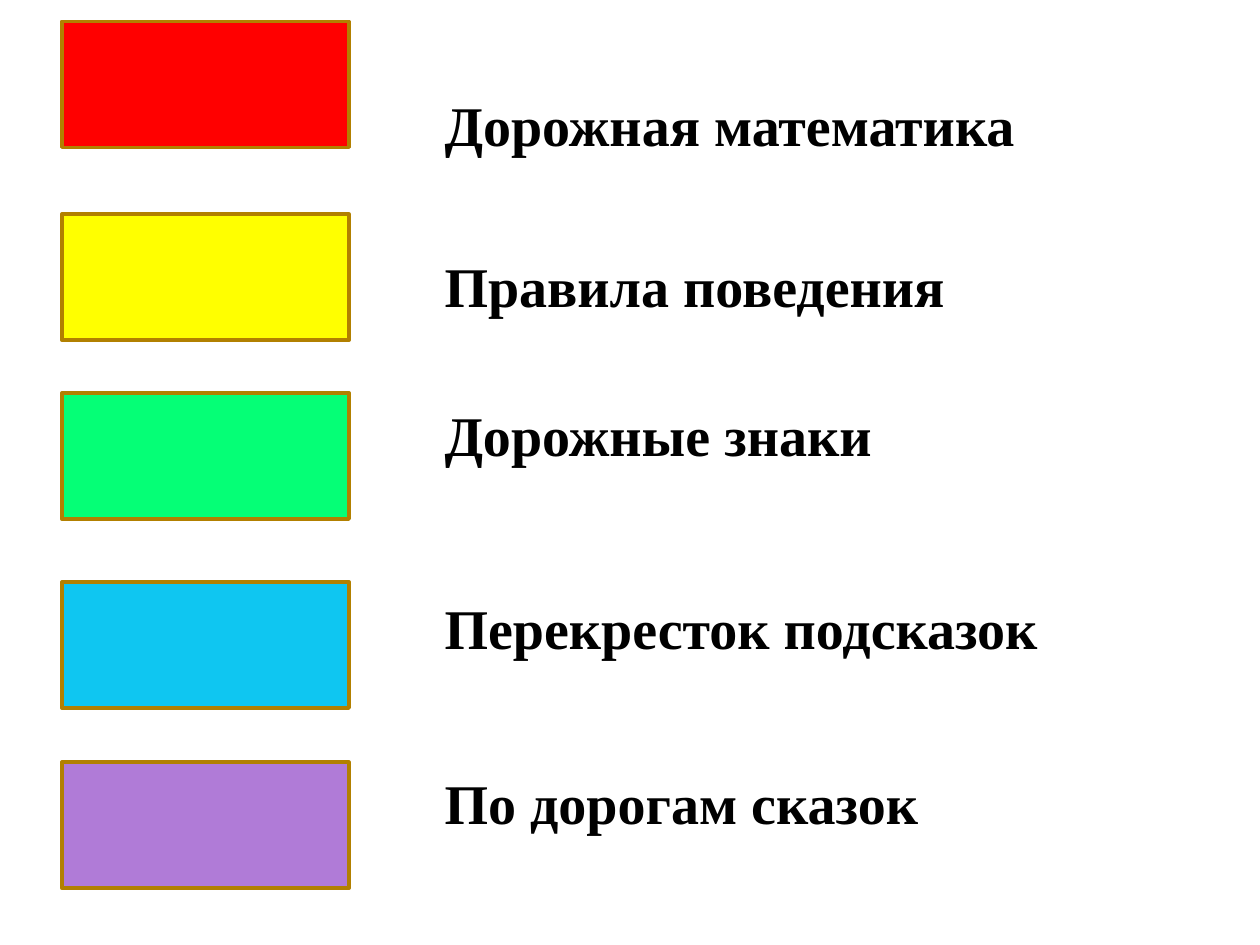
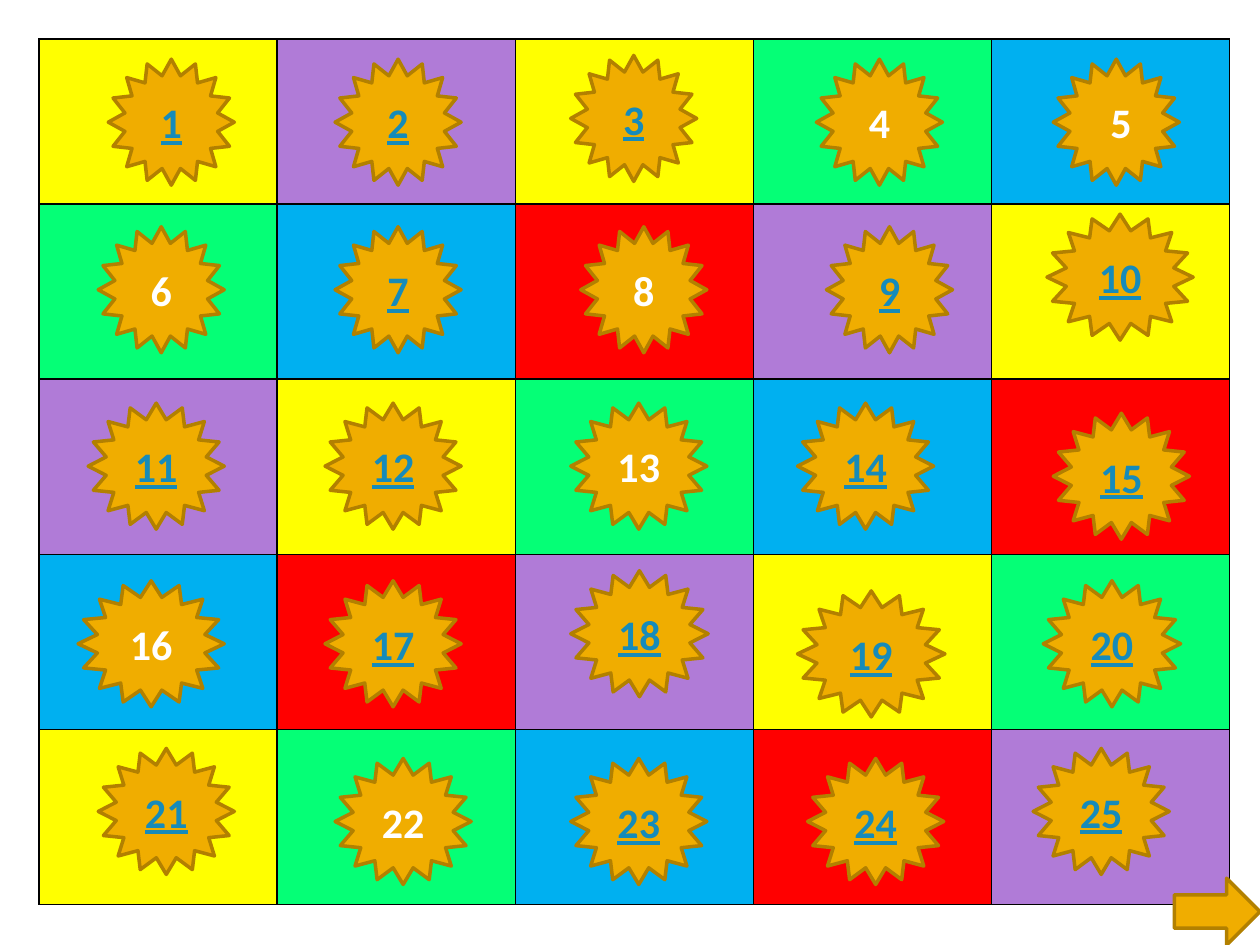
from pptx import Presentation
from pptx.dml.color import RGBColor
from pptx.enum.shapes import MSO_SHAPE
from pptx.enum.text import MSO_ANCHOR, PP_ALIGN
from pptx.oxml import parse_xml
from pptx.oxml.ns import nsdecls
from pptx.util import Inches, Pt

RECTANGLE = MSO_SHAPE.RECTANGLE
STAR = MSO_SHAPE.STAR_16_POINT
RIGHT_ARROW = MSO_SHAPE.RIGHT_ARROW
MIDDLE = MSO_ANCHOR.MIDDLE
CENTER = PP_ALIGN.CENTER

BLACK, WHITE = "000000", "FFFFFF"
GOLD, OUTLINE, LINK = "F0AD00", "B28000", "168BBA"
RED, YELLOW, GREEN, PURPLE = "FF0000", "FFFF00", "05FF76", "B07BD7"
LEGEND_BLUE, BOARD_BLUE = "0FC6F1", "00B0F0"

CATEGORIES = [
    ("Дорожная математика", RED, 0.17, 0.67, 5.91),
    ("Правила поведения", YELLOW, 1.7, 1.95, 5.04),
    ("Дорожные знаки", GREEN, 3.12, 3.13, 5.66),
    ("Перекресток подсказок", LEGEND_BLUE, 4.62, 4.66, 6.01),
    ("По дорогам сказок", PURPLE, 6.05, 6.05, 4.31),
]

BOARD = [
    [YELLOW, PURPLE, YELLOW, GREEN, BOARD_BLUE],
    [GREEN, BOARD_BLUE, RED, PURPLE, YELLOW],
    [PURPLE, YELLOW, GREEN, BOARD_BLUE, RED],
    [BOARD_BLUE, RED, PURPLE, YELLOW, GREEN],
    [YELLOW, GREEN, BOARD_BLUE, RED, PURPLE],
]
COLUMN_WIDTH = 1.89
ROW_HEIGHTS = [1.31, 1.39, 1.39, 1.39, 1.39]

STAR_PLACES = [
    (0.86, 0.47, 1), (2.66, 0.47, 1), (4.53, 0.44, 1), (6.48, 0.47, 1), (8.36, 0.47, 1),
    (0.78, 1.8, 1), (2.66, 1.8, 1), (4.61, 1.8, 1), (6.56, 1.8, 1), (8.31, 1.7, 1.16),
    (0.7, 3.2, 1.08), (2.58, 3.2, 1.08), (4.53, 3.2, 1.08), (6.33, 3.2, 1.08), (8.36, 3.28, 1.08),
    (0.62, 4.61, 1.16), (2.58, 4.61, 1.08), (4.53, 4.53, 1.09), (6.33, 4.69, 1.17), (8.28, 4.61, 1.09),
    (0.78, 5.94, 1.08), (2.66, 6.02, 1.08), (4.53, 6.02, 1.08), (6.41, 6.02, 1.08), (8.2, 5.94, 1.08),
]
PLAIN_NUMBERS = {4, 5, 6, 8, 13, 16, 22}


def color(value):
    """Turn a hex string into a colour."""
    return RGBColor.from_string(value)


def add_figure(slide, kind, left, top, width, height, fill):
    """Add a filled preset shape with the shared outline."""
    figure = slide.shapes.add_shape(
        kind, Inches(left), Inches(top), Inches(width), Inches(height))
    figure.shadow.inherit = False
    figure.fill.solid()
    figure.fill.fore_color.rgb = color(fill)
    figure.line.color.rgb = color(OUTLINE)
    figure.line.width = Pt(2)
    return figure


def add_bold_run(paragraph, words, face, size, ink):
    """Add a bold run and return it."""
    run = paragraph.add_run()
    run.text = words
    run.font.name = face
    run.font.size = Pt(size)
    run.font.bold = True
    run.font.color.rgb = color(ink)
    return run


def add_label(slide, words, top, width):
    """Add the name of a category beside its colour."""
    label = slide.shapes.add_textbox(
        Inches(3.43), Inches(top), Inches(width), Inches(0.64))
    label.text_frame.word_wrap = True
    add_bold_run(label.text_frame.paragraphs[0], words, "Times New Roman", 32, BLACK)


def add_star(slide, number, left, top, width):
    """Add a numbered star, underlined when it leads to a question."""
    star = add_figure(slide, STAR, left, top, width, 1, GOLD)
    star.text_frame.vertical_anchor = MIDDLE
    paragraph = star.text_frame.paragraphs[0]
    paragraph.alignment = CENTER
    plain = number in PLAIN_NUMBERS
    words = " 5" if number == 5 else str(number)
    run = add_bold_run(paragraph, words, "Calibri", 24, WHITE if plain else LINK)
    if not plain:
        run.font.underline = True


def paint_cell(cell, fill):
    """Give a cell thin black borders and a solid fill."""
    properties = cell._tc.get_or_add_tcPr()
    for side in ("lnL", "lnR", "lnT", "lnB"):
        properties.append(parse_xml(
            f'<a:{side} {nsdecls("a")} w="12700"><a:solidFill>'
            f'<a:srgbClr val="{BLACK}"/></a:solidFill></a:{side}>'))
    cell.fill.solid()
    cell.fill.fore_color.rgb = color(fill)


def add_board(slide):
    """Add the coloured grid of the game."""
    columns = len(BOARD[0])
    board = slide.shapes.add_table(
        len(BOARD), columns, Inches(0.31), Inches(0.31),
        Inches(COLUMN_WIDTH * columns), Inches(sum(ROW_HEIGHTS))).table
    for column in board.columns:
        column.width = Inches(COLUMN_WIDTH)
    for row, height, fills in zip(board.rows, ROW_HEIGHTS, BOARD):
        row.height = Inches(height)
        for cell, fill in zip(row.cells, fills):
            paint_cell(cell, fill)


def build_legend(slide):
    """Show which colour stands for which category."""
    for words, fill, swatch_top, label_top, label_width in CATEGORIES:
        add_figure(slide, RECTANGLE, 0.49, swatch_top, 2.28, 1, fill)
        add_label(slide, words, label_top, label_width)


def build_game(slide):
    """Show the board, its numbered stars and the arrow onwards."""
    add_board(slide)
    for number, place in enumerate(STAR_PLACES, start=1):
        add_star(slide, number, *place)
    add_figure(slide, RIGHT_ARROW, 9.32, 6.97, 0.68, 0.53, GOLD)


def main():
    """Build both slides and save the presentation."""
    presentation = Presentation()
    presentation.slide_width = Inches(10)
    presentation.slide_height = Inches(7.5)
    blank = presentation.slide_layouts[6]
    for build in (build_legend, build_game):
        build(presentation.slides.add_slide(blank))
    presentation.save("out.pptx")


if __name__ == "__main__":
    main()
